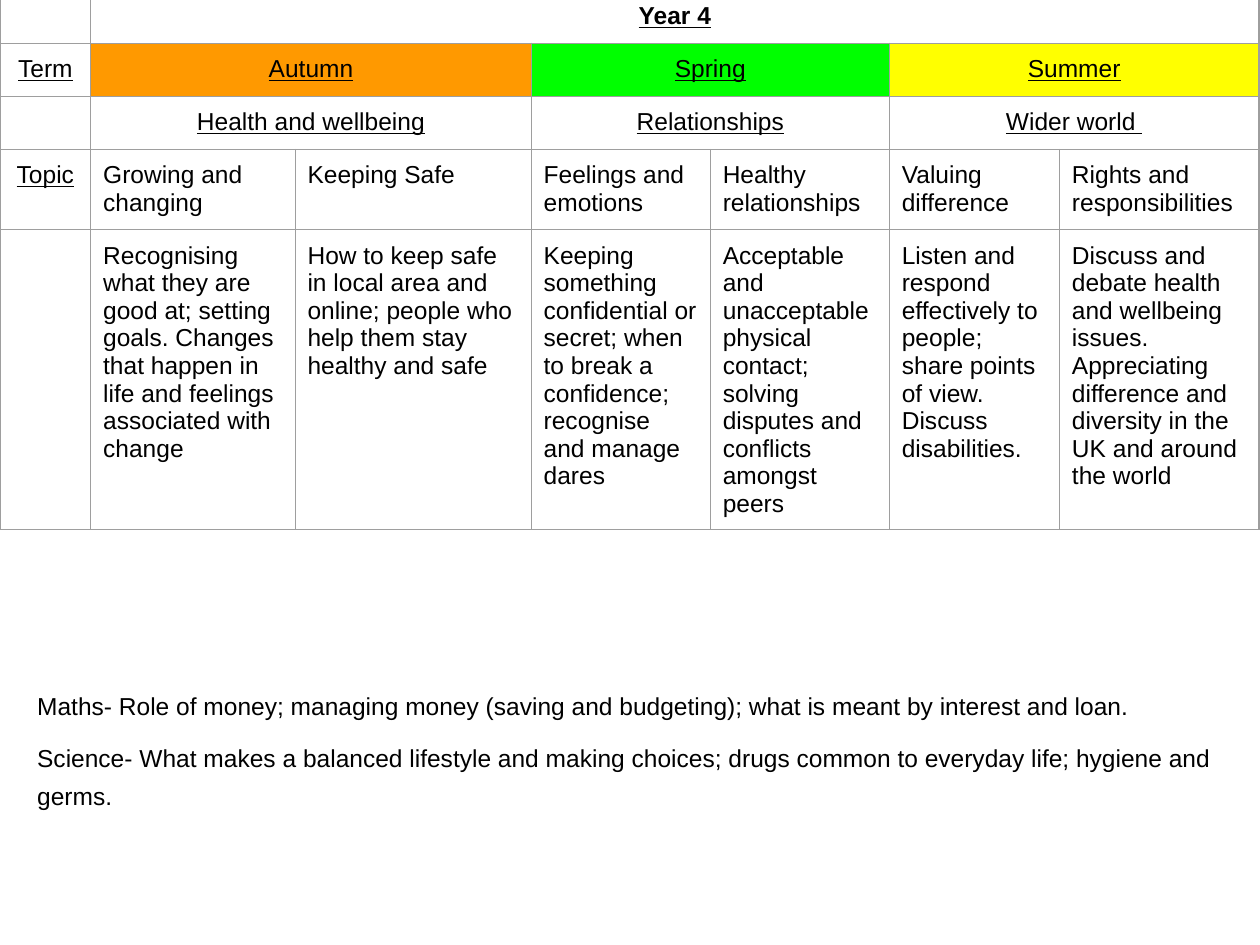
from lxml.etree import SubElement
from pptx import Presentation
from pptx.dml.color import RGBColor
from pptx.enum.text import MSO_ANCHOR, PP_ALIGN
from pptx.oxml.ns import qn
from pptx.util import Cm, Pt

BLACK = RGBColor(0x00, 0x00, 0x00)
ORANGE = RGBColor(0xFF, 0x99, 0x00)
GREEN = RGBColor(0x00, 0xFF, 0x00)
YELLOW = RGBColor(0xFF, 0xFF, 0x00)
GREY = RGBColor(0x9E, 0x9E, 0x9E)

YEAR = "Year 4"
TERMS = [
    ("Autumn", ORANGE, "Health and wellbeing"),
    ("Spring", GREEN, "Relationships"),
    ("Summer", YELLOW, "Wider world "),
]
TOPICS = [
    ("Growing and changing",
     "Recognising what they are good at; setting goals. Changes that happen in life "
     "and feelings associated with change"),
    ("Keeping Safe",
     "How to keep safe in local area and online; people who help them stay healthy and safe"),
    ("Feelings and emotions",
     "Keeping something confidential or secret; when to break a confidence; "
     "recognise and manage dares"),
    ("Healthy relationships",
     "Acceptable and unacceptable physical contact; solving disputes and conflicts amongst peers"),
    ("Valuing difference",
     "Listen and respond effectively to people; share points of view. Discuss disabilities."),
    ("Rights and responsibilities",
     "Discuss and debate health and wellbeing issues. Appreciating difference and "
     "diversity in the UK and around the world"),
]
NOTES = [
    "Maths- Role of money; managing money (saving and budgeting); "
    "what is meant by interest and loan.",
    "Science- What makes a balanced lifestyle and making choices; "
    "drugs common to everyday life; hygiene and germs.",
]

COL_WIDTHS = [1.83, 4.12, 4.76, 3.61, 3.61, 3.43, 4.02]
ROW_HEIGHTS = [1.07, 1.07, 1.07, 1.62, 6.05]
PADDING = Cm(0.25)
BODY = {"name": "Arial", "size": Pt(14)}
HEADING = BODY | {"underline": True}
TITLE = HEADING | {"bold": True}


def pad(box):
    for side in ("left", "right", "top", "bottom"):
        setattr(box, f"margin_{side}", PADDING)


def write(p, text, font):
    r = p.add_run()
    r.text = text
    for name, value in font.items():
        setattr(r.font, name, value)
    r.font.color.rgb = BLACK


def add_borders(cell):
    tc_pr = cell._tc.get_or_add_tcPr()
    for side in ("lnL", "lnR", "lnT", "lnB"):
        ln = SubElement(tc_pr, qn(f"a:{side}"), w=str(Pt(0.75)))
        fill = SubElement(ln, qn("a:solidFill"))
        SubElement(fill, qn("a:srgbClr"), val=str(GREY))


def fill_cell(cell, text, font=HEADING, align=PP_ALIGN.CENTER, colour=None):
    pad(cell)
    p = cell.text_frame.paragraphs[0]
    p.alignment = align
    write(p, text, font)
    if colour is not None:
        cell.fill.solid()
        cell.fill.fore_color.rgb = colour


def add_year_table(s):
    table = s.shapes.add_table(len(ROW_HEIGHTS), len(COL_WIDTHS), Cm(0), Cm(-0.2),
                               Cm(sum(COL_WIDTHS)), Cm(sum(ROW_HEIGHTS))).table
    table.first_row = table.horz_banding = False
    for column, width in zip(table.columns, COL_WIDTHS):
        column.width = Cm(width)
    for row, height in zip(table.rows, ROW_HEIGHTS):
        row.height = Cm(height)
    for cell in table.iter_cells():
        add_borders(cell)
        cell.fill.background()

    table.cell(0, 1).merge(table.cell(0, len(TOPICS)))
    fill_cell(table.cell(0, 1), YEAR, TITLE)
    fill_cell(table.cell(1, 0), "Term")
    fill_cell(table.cell(3, 0), "Topic")
    for i, (term, colour, theme) in enumerate(TERMS):
        col = 1 + 2 * i
        for row, text, shade in ((1, term, colour), (2, theme, None)):
            cell = table.cell(row, col)
            cell.merge(table.cell(row, col + 1))
            fill_cell(cell, text, colour=shade)
    for col, texts in enumerate(TOPICS, 1):
        for row, text in enumerate(texts, 3):
            fill_cell(table.cell(row, col), text, BODY, PP_ALIGN.LEFT)


def add_notes(s):
    tf = s.shapes.add_textbox(Cm(0.5), Cm(13.51), Cm(24.49), Cm(4.85)).text_frame
    tf.word_wrap = True
    tf.vertical_anchor = MSO_ANCHOR.TOP
    pad(tf)
    for i, text in enumerate(NOTES):
        p = tf.add_paragraph() if i else tf.paragraphs[0]
        p.line_spacing = 1.29
        p.space_before = Pt(8 if i else 0)
        write(p, text, BODY)


def main():
    prs = Presentation()
    prs.slide_width, prs.slide_height = Cm(25.4), Cm(19.05)
    s = prs.slides.add_slide(prs.slide_layouts[6])
    add_year_table(s)
    add_notes(s)
    prs.save("out.pptx")


if __name__ == "__main__":
    main()
